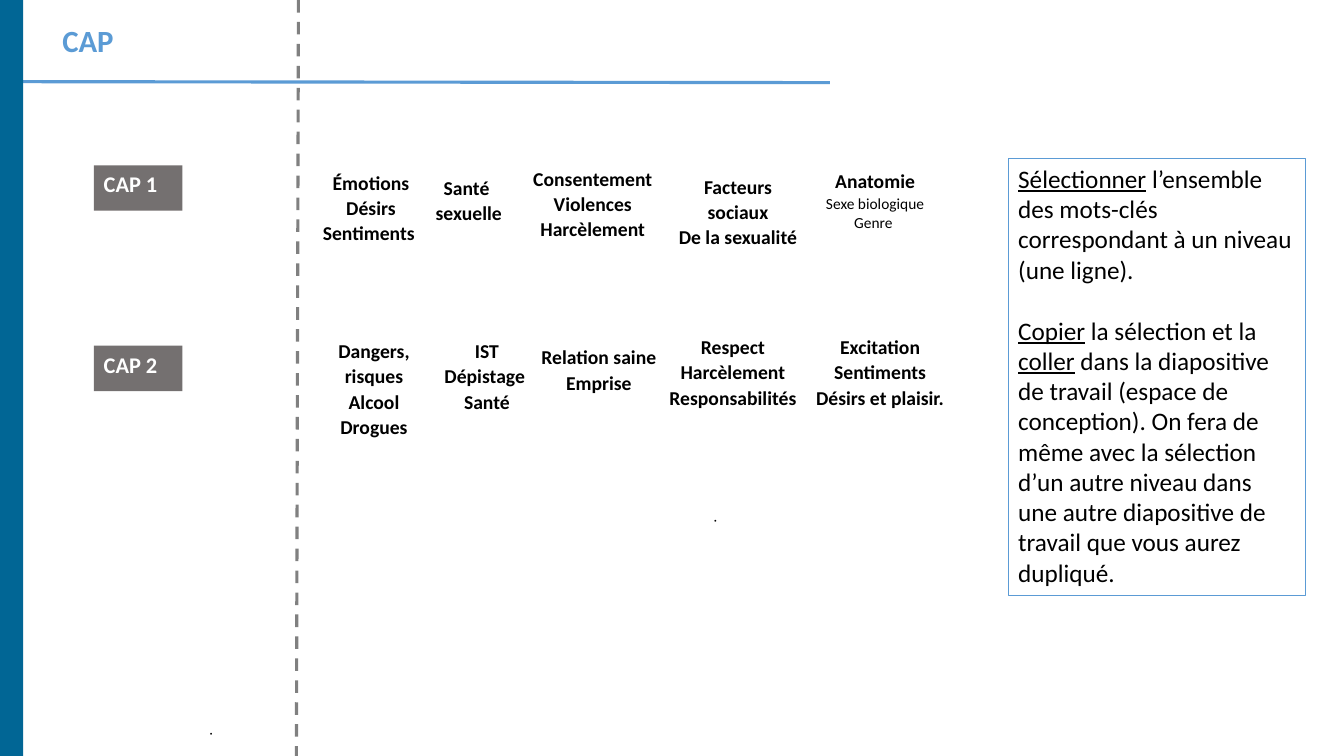
import pptx
import pptx.util
import pptx.dml.color
import pptx.enum.dml
import pptx.enum.shapes
import pptx.enum.text
import lxml.etree

WIDE, HIGH = 13.33, 7.5
FONT = "Calibri"
HUES = {"blue": "5B9BD5", "teal": "016695", "gray": "747070",
        "dash": "808080", "black": "000000", "white": "FFFFFF"}

TITLE = "CAP"
LEVELS = [
    ("CAP 1", 1.64, [
        (3.68, 1.63, ["Émotions", "Désirs", "Sentiments "]),
        (4.65, 1.68, ["Santé ", "sexuelle"]),
        (5.88, 1.59, ["Consentement", "Violences", "Harcèlement"]),
        (7.32, 1.67, ["Facteurs sociaux", "De la sexualité"]),
        (8.68, 1.61, ["Anatomie", ("Sexe biologique", 11), ("Genre ", 11)]),
    ]),
    ("CAP 2", 3.43, [
        (3.71, 3.30, ["Dangers, risques", "Alcool", "Drogues"]),
        (4.83, 3.30, ["IST", "Dépistage ", "Santé"]),
        (5.94, 3.36, ["Relation saine", "Emprise"]),
        (7.27, 3.26, ["Respect", "Harcèlement", "Responsabilités "]),
        (8.73, 3.26, ["Excitation", "Sentiments", "Désirs et plaisir."]),
    ]),
]
GUIDE = [
    [("Sélectionner", True),
     (" l’ensemble des mots-clés correspondant à un niveau (une ligne).", False)],
    [("Copier", True), (" la sélection et la ", False), ("coller", True),
     (" dans la diapositive de travail (espace de conception). On fera de même "
      "avec la sélection d’un autre niveau dans une autre diapositive de travail "
      "que vous aurez dupliqué.", False)],
]
DOTS = [(1.44, 7.18), (6.44, 5.07)]
RULES = [((0, 0.81), (8.23, 0.82), "blue", False),
         ((2.96, 0), (2.94, HIGH), "dash", True)]

inch = pptx.util.Inches
point = pptx.util.Pt
align = pptx.enum.text.PP_ALIGN
anchor = pptx.enum.text.MSO_ANCHOR


def hue(name):
    return pptx.dml.color.RGBColor.from_string(HUES[name])


def style(para, size, color="black", bold=False, side=align.LEFT):
    font = para.font
    font.name, font.size, font.bold = FONT, point(size), bold
    font.color.rgb = hue(color)
    para.alignment = side


def add_text(x, y, w, h, wrap=False):
    box = slide.shapes.add_textbox(inch(x), inch(y), inch(w), inch(h))
    box.text_frame.word_wrap = wrap
    return box


def add_rect(x, y, w, h, fill, edge=None):
    rect = slide.shapes.add_shape(pptx.enum.shapes.MSO_SHAPE.RECTANGLE,
                                  inch(x), inch(y), inch(w), inch(h))
    rect.shadow.inherit = False
    rect.fill.solid()
    rect.fill.fore_color.rgb = hue(fill)
    if edge:
        rect.line.color.rgb = hue(edge)
        rect.line.width = point(1)
    else:
        rect.line.fill.background()
    rect.text_frame.vertical_anchor = anchor.TOP
    return rect


def add_rule(start, end, color, dash):
    rule = slide.shapes.add_connector(pptx.enum.shapes.MSO_CONNECTOR.STRAIGHT,
                                      *map(inch, start + end))
    rule.line.color.rgb = hue(color)
    rule.line.width = point(2.25)
    if dash:
        rule.line.dash_style = pptx.enum.dml.MSO_LINE.DASH
    props = rule._element.spPr
    lxml.etree.SubElement(props, pptx.oxml.ns.qn("a:effectLst"))


def add_words(mid, top, lines):
    wide = 1.5
    frame = add_text(mid - wide / 2, top, wide, 0.92).text_frame
    for n, line in enumerate(lines):
        word, size = line if isinstance(line, tuple) else (line, 14)
        para = frame.add_paragraph() if n else frame.paragraphs[0]
        para.text = word
        style(para, size, bold=size == 14, side=align.CENTER)
        para.line_spacing = 1.07


def add_guide():
    frame = add_rect(10, 1.57, 2.95, 4.34, "white", "blue").text_frame
    frame.word_wrap = True
    for n, parts in enumerate(GUIDE):
        para = frame.add_paragraph() if n else frame.paragraphs[0]
        for words, under in parts:
            run = para.add_run()
            run.text = words
            run.font.underline = under
        style(para, 18)
        para.space_before = point(22 * n)


deck = pptx.Presentation()
deck.slide_width, deck.slide_height = inch(WIDE), inch(HIGH)
slide = deck.slides.add_slide(deck.slide_layouts[6])

for rule in RULES:
    add_rule(*rule)

head = add_text(0.52, 0.1, 0.72, 0.6).text_frame
head.vertical_anchor = anchor.MIDDLE
head.text = TITLE
style(head.paragraphs[0], 22, "blue", True)

for x, y in DOTS:
    dot = add_text(x, y, 1.21, 0.27, True)
    dot.rotation = 239.9
    dot.text_frame.text = "."
    style(dot.text_frame.paragraphs[0], 11, side=align.CENTER)

for name, top, groups in LEVELS:
    tag = add_rect(0.93, top, 0.88, 0.45, "gray").text_frame
    tag.text = name
    style(tag.paragraphs[0], 16, "white", True)
    for group in groups:
        add_words(*group)

add_guide()
add_rect(0, 0, 0.23, HIGH, "teal")
deck.save("out.pptx")
